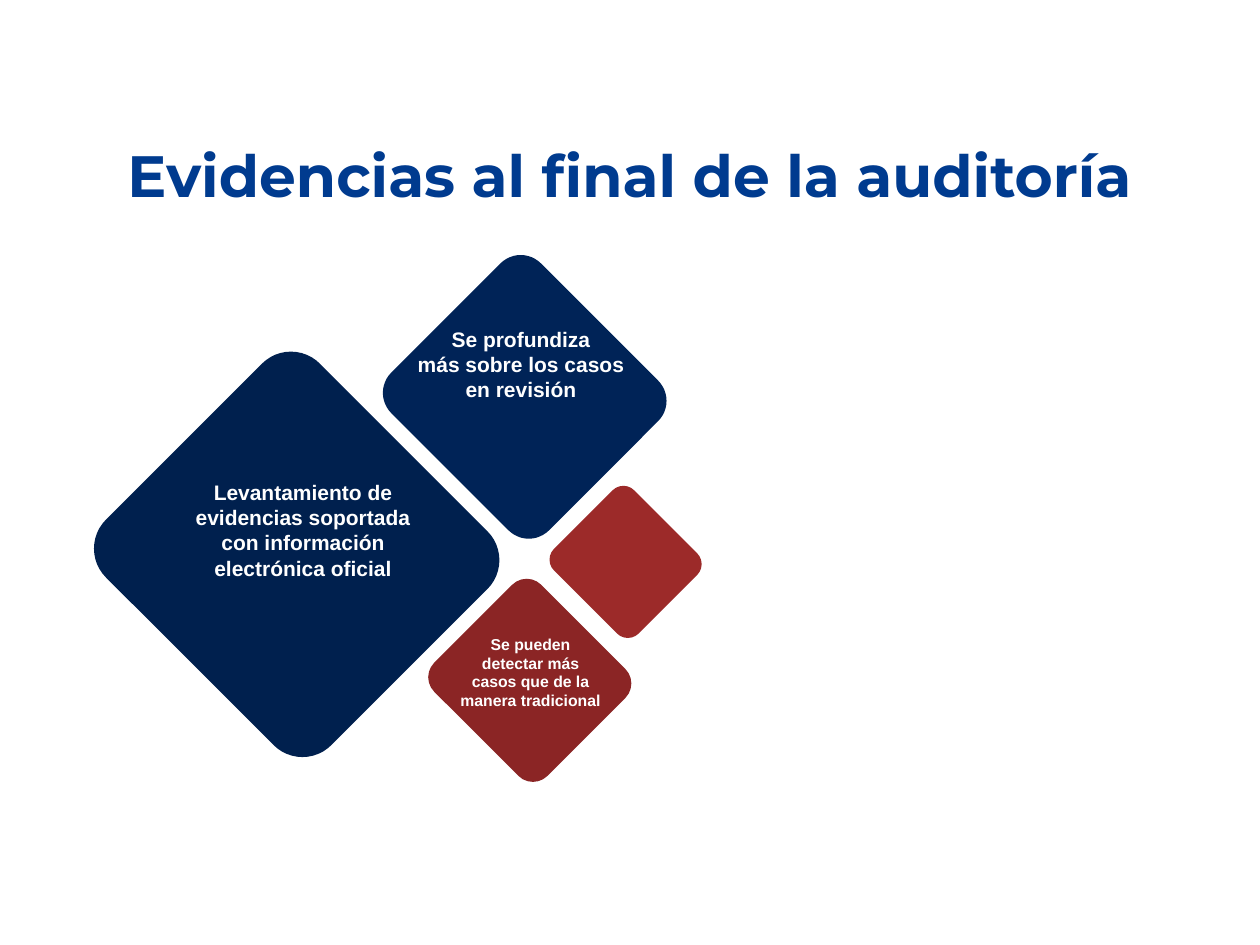
from pptx import Presentation
from pptx.dml.color import RGBColor
from pptx.enum.shapes import MSO_SHAPE
from pptx.enum.text import MSO_ANCHOR, PP_ALIGN
from pptx.util import Inches, Pt

NAVY = RGBColor(0x00, 0x20, 0x4E)
BLUE = RGBColor(0x00, 0x23, 0x57)
WINE = RGBColor(0x8B, 0x25, 0x25)
RED = RGBColor(0x9C, 0x2A, 0x29)
ROYAL = RGBColor(0x00, 0x3B, 0x8F)
WHITE = RGBColor(0xFF, 0xFF, 0xFF)


class Deck:
    """Holds the text style and the current slide, and adds its elements."""

    def __init__(self, slide, font="Arial"):
        self.slide = slide
        self.font = font

    def style(self, frame, text, size, color, font, anchor):
        frame.word_wrap = True
        frame.vertical_anchor = anchor
        frame.text = text
        for para in frame.paragraphs:
            para.alignment = PP_ALIGN.CENTER
            for run in para.runs:
                run.font.name = font
                run.font.size = Pt(size)
                run.font.bold = True
                run.font.color.rgb = color

    def title(self, text, box, size):
        shape = self.slide.shapes.title
        shape.left, shape.top, shape.width, shape.height = map(Inches, box)
        self.style(shape.text_frame, text, size, ROYAL, "Montserrat",
                   MSO_ANCHOR.MIDDLE)

    def diamond(self, box, color):
        shape = self.slide.shapes.add_shape(
            MSO_SHAPE.ROUNDED_RECTANGLE, *map(Inches, box))
        shape.adjustments[0] = 0.135
        shape.rotation = 45
        shape.shadow.inherit = False
        shape.fill.solid()
        shape.fill.fore_color.rgb = color
        shape.line.fill.background()

    def label(self, text, box, size, anchor=MSO_ANCHOR.MIDDLE):
        shape = self.slide.shapes.add_textbox(*map(Inches, box))
        self.style(shape.text_frame, text, size, WHITE, self.font, anchor)


def main():
    prs = Presentation()
    prs.slide_width, prs.slide_height = Inches(10), Inches(7.5)
    deck = Deck(prs.slides.add_slide(prs.slide_layouts[5]))
    deck.title("Evidencias al final de la auditoría", (0, 1.07, 10, 0.63), 33.3)

    for box, color in (
        ((1.09, 3.2, 2.53, 2.4), NAVY),
        ((3.28, 2.31, 1.77, 1.68), BLUE),
        ((3.57, 4.8, 1.27, 1.2), WINE),
        ((4.49, 4.01, 0.95, 0.9), RED),
    ):
        deck.diamond(box, color)

    deck.label("Levantamiento de evidencias soportada con información "
               "electrónica oficial", (1.33, 3.75, 2.15, 0.91), 12)
    deck.label("Se profundiza\nmás sobre los casos en revisión",
               (3.16, 2.54, 1.95, 0.71), 12, MSO_ANCHOR.TOP)
    deck.label("Se pueden detectar más casos que de la manera tradicional",
               (3.55, 4.98, 1.32, 0.71), 9)
    prs.save("out.pptx")


if __name__ == "__main__":
    main()
